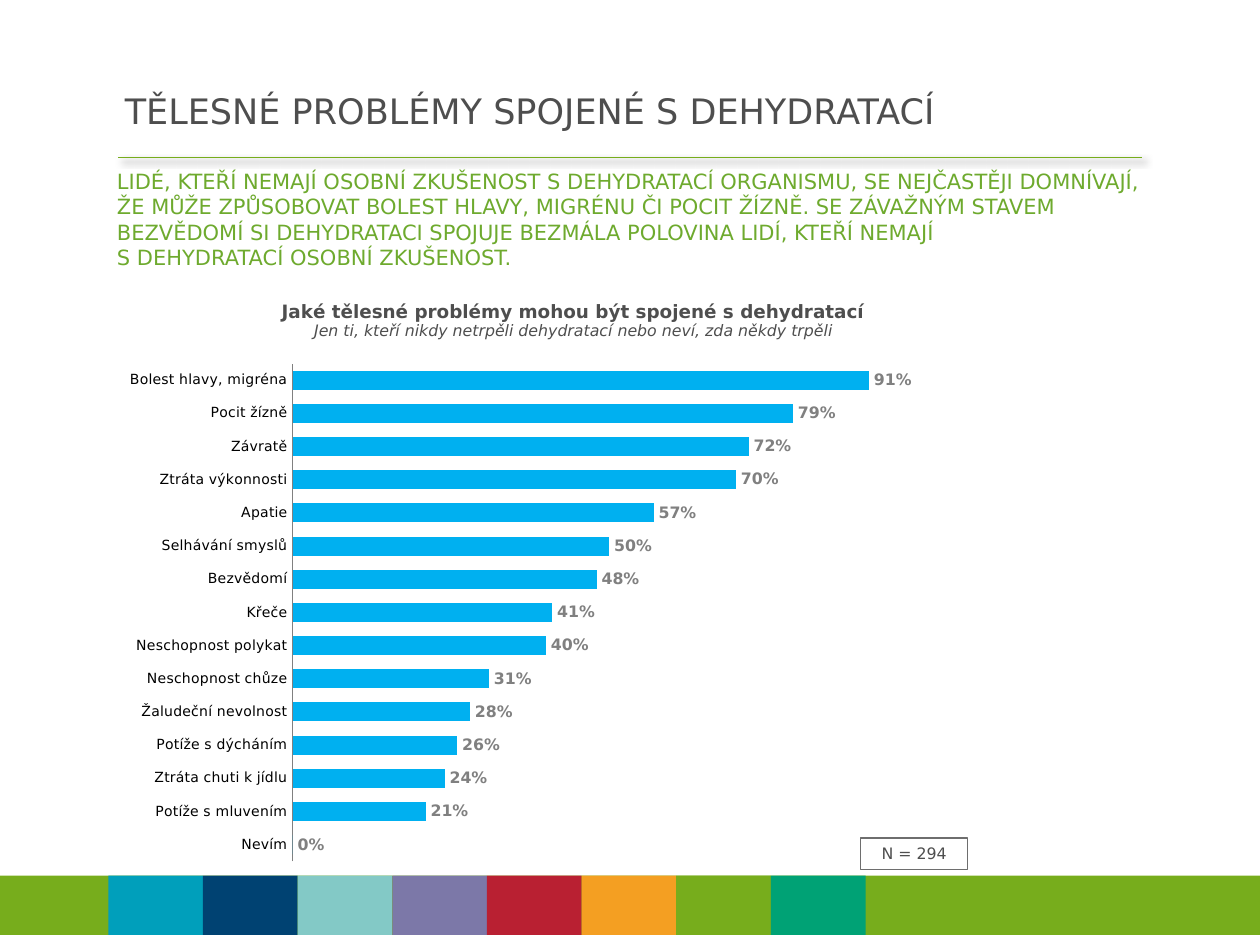
from copy import deepcopy

from pptx import Presentation
from pptx.chart.data import CategoryChartData
from pptx.dml.color import RGBColor
from pptx.enum.chart import XL_CHART_TYPE, XL_LABEL_POSITION, XL_TICK_MARK
from pptx.enum.shapes import MSO_CONNECTOR, MSO_SHAPE
from pptx.enum.text import MSO_ANCHOR, MSO_AUTO_SIZE, PP_ALIGN
from pptx.oxml import parse_xml
from pptx.oxml.ns import nsdecls, qn
from pptx.util import Inches, Pt

BAR = XL_CHART_TYPE.BAR_CLUSTERED
OUTSIDE_END = XL_LABEL_POSITION.OUTSIDE_END
NO_TICK = XL_TICK_MARK.NONE
STRAIGHT = MSO_CONNECTOR.STRAIGHT
RECTANGLE = MSO_SHAPE.RECTANGLE
TOP, MIDDLE = MSO_ANCHOR.TOP, MSO_ANCHOR.MIDDLE
NO_FIT = MSO_AUTO_SIZE.NONE
LEFT, CENTER = PP_ALIGN.LEFT, PP_ALIGN.CENTER

FONT = "DejaVu Sans"
DARK, GREEN = "4E4E4E", "77AD1C"
BAND_COLORS = ["009FBB", "004272", "83C9C6", "7C78A8",
               "B92032", "F49F22", GREEN, "00A275"]
TITLE = "TĚLESNÉ PROBLÉMY SPOJENÉ S DEHYDRATACÍ"
SUMMARY = (
    "LIDÉ, KTEŘÍ NEMAJÍ OSOBNÍ ZKUŠENOST S DEHYDRATACÍ ORGANISMU, "
    "SE NEJČASTĚJI DOMNÍVAJÍ, ŽE MŮŽE ZPŮSOBOVAT BOLEST HLAVY, MIGRÉNU "
    "ČI POCIT ŽÍZNĚ. SE ZÁVAŽNÝM STAVEM BEZVĚDOMÍ SI DEHYDRATACI SPOJUJE "
    "BEZMÁLA POLOVINA LIDÍ, KTEŘÍ NEMAJÍ\nS DEHYDRATACÍ OSOBNÍ ZKUŠENOST."
)
CHART_TITLE = "Jaké tělesné problémy mohou být spojené s dehydratací"
CHART_SUBTITLE = "Jen ti, kteří nikdy netrpěli dehydratací nebo neví, zda někdy trpěli"
PROBLEMS = {
    "Bolest hlavy, migréna": 0.91,
    "Pocit žízně": 0.79,
    "Závratě": 0.72,
    "Ztráta výkonnosti": 0.7,
    "Apatie": 0.57,
    "Selhávání smyslů": 0.5,
    "Bezvědomí": 0.48,
    "Křeče": 0.41,
    "Neschopnost polykat": 0.4,
    "Neschopnost chůze": 0.31,
    "Žaludeční nevolnost": 0.28,
    "Potíže s dýcháním": 0.26,
    "Ztráta chuti k jídlu": 0.24,
    "Potíže s mluvením": 0.21,
    "Nevím": 0,
}


def color(value):
    """Turn a hex string into a colour."""
    return RGBColor.from_string(value)


def format_font(font, size, fill, bold=False, italic=False):
    """Set the typeface, size, colour and style of a font."""
    font.name, font.size = FONT, Pt(size)
    font.bold, font.italic = bold, italic
    font.color.rgb = color(fill)


def write(paragraph, text, align=LEFT, after=0, **style):
    """Fill a paragraph with formatted text, where a newline breaks the line."""
    paragraph.text = text
    paragraph.alignment = align
    paragraph.space_before, paragraph.space_after = Pt(0), Pt(after)
    for run in paragraph.runs:
        format_font(run.font, **style)
    for line_break in paragraph._p.findall(qn("a:br")):
        line_break.insert(0, deepcopy(paragraph.runs[0]._r.rPr))


def place(shape, left, top, width, height):
    """Move and size a shape in inches."""
    shape.left, shape.top = Inches(left), Inches(top)
    shape.width, shape.height = Inches(width), Inches(height)


def set_frame(text_frame, anchor):
    """Make a text frame wrap at a fixed size with the given anchor."""
    text_frame.word_wrap = True
    text_frame.auto_size = NO_FIT
    text_frame.vertical_anchor = anchor


def add_rectangle(slide, left, top, width, height, fill=None, line=None):
    """Add a flat rectangle with an optional fill and outline."""
    shape = slide.shapes.add_shape(
        RECTANGLE, Inches(left), Inches(top), Inches(width), Inches(height))
    shape.shadow.inherit = False
    if fill:
        shape.fill.solid()
        shape.fill.fore_color.rgb = color(fill)
    else:
        shape.fill.background()
    if line:
        shape.line.color.rgb = color(line)
        shape.line.width = Pt(0.75)
    else:
        shape.line.fill.background()
    return shape


def add_rule(slide, left, top, width):
    """Add the green rule with its soft shadow."""
    rule = slide.shapes.add_connector(
        STRAIGHT, Inches(left), Inches(top), Inches(left + width), Inches(top))
    rule.line.color.rgb = color(GREEN)
    rule.line.width = Pt(0.75)
    rule._element.spPr.append(parse_xml(
        f'<a:effectLst {nsdecls("a")}><a:outerShdw blurRad="{Pt(4)}" '
        f'dist="{Pt(3)}" dir="2700000" rotWithShape="0"><a:srgbClr val="000000">'
        '<a:alpha val="40000"/></a:srgbClr></a:outerShdw></a:effectLst>'))


def add_band(slide, left, top, width, height):
    """Add the footer band with its row of coloured blocks."""
    add_rectangle(slide, left, top, width, height, fill=GREEN)
    first, last = left + 0.86, left + 6.87
    step = (last - first) / len(BAND_COLORS)
    for index, fill in enumerate(BAND_COLORS):
        add_rectangle(slide, first + index * step, top, step, height, fill=fill)


def add_heading(slide, left, top, width, height):
    """Place the slide title."""
    title = slide.shapes.title
    place(title, left, top, width, height)
    set_frame(title.text_frame, MIDDLE)
    write(title.text_frame.paragraphs[0], TITLE, after=3, size=20, fill=DARK)


def add_summary(slide, left, top, width, height):
    """Add the summary text below the rule."""
    box = slide.shapes.add_textbox(
        Inches(left), Inches(top), Inches(width), Inches(height))
    set_frame(box.text_frame, TOP)
    write(box.text_frame.paragraphs[0], SUMMARY, size=12, fill="6EAA2E")


def add_sample_size(slide, left, top, width, height):
    """Add the outlined box with the sample size."""
    box = add_rectangle(slide, left, top, width, height, line="6E6E6E")
    set_frame(box.text_frame, MIDDLE)
    write(box.text_frame.paragraphs[0], "N = 294", align=CENTER, size=9, fill=DARK)


def set_layout(element, index, target="", **fractions):
    """Give a chart part a manual layout in fractions of the chart."""
    for layout in element.findall(qn("c:layout")):
        element.remove(layout)
    modes = "".join(f'<c:{axis}Mode val="edge"/>' for axis in "xy")
    values = "".join(f'<c:{key} val="{value}"/>' for key, value in fractions.items())
    element.insert(index, parse_xml(
        f'<c:layout {nsdecls("c")}><c:manualLayout>{target}{modes}{values}'
        '</c:manualLayout></c:layout>'))


def add_problem_chart(slide, left, top, width, height):
    """Add the bar chart of problems linked to dehydration."""
    data = CategoryChartData(number_format="0%")
    data.categories = list(PROBLEMS)
    data.add_series("Series 1", list(PROBLEMS.values()))
    chart = slide.shapes.add_chart(
        BAR, Inches(left), Inches(top), Inches(width), Inches(height), data).chart
    chart.has_legend = False
    format_font(chart.font, size=18, fill="000000")

    heading = chart.chart_title.text_frame
    write(heading.paragraphs[0], CHART_TITLE, align=CENTER,
          size=10.5, fill=DARK, bold=True)
    write(heading.add_paragraph(), CHART_SUBTITLE, align=CENTER,
          size=9, fill=DARK, italic=True)
    set_layout(chart.chart_title._element, 1, x=0.3, y=0.03)
    set_layout(chart._chartSpace.chart.plotArea, 0,
               target='<c:layoutTarget val="inner"/>',
               x=0.316, y=0.14, w=0.684, h=0.795)

    categories, values = chart.category_axis, chart.value_axis
    categories.reverse_order = True
    categories.major_tick_mark = categories.minor_tick_mark = NO_TICK
    categories.format.line.color.rgb = color("808080")
    categories.format.line.width = Pt(0.75)
    format_font(categories.tick_labels.font, size=8, fill="000000")
    values.minimum_scale, values.maximum_scale = 0, 1
    values.has_major_gridlines = False
    values.visible = False

    plot = chart.plots[0]
    plot.gap_width = 75
    plot.vary_by_categories = False
    bars = plot.series[0].format.fill
    bars.solid()
    bars.fore_color.rgb = color("00B0F0")
    plot.has_data_labels = True
    labels = plot.data_labels
    labels.show_value = True
    labels.number_format, labels.number_format_is_linked = "0%", False
    labels.position = OUTSIDE_END
    format_font(labels.font, size=9, fill="808080", bold=True)


def main():
    """Build the slide and save it."""
    presentation = Presentation()
    presentation.slide_width, presentation.slide_height = Inches(10), Inches(7.5)
    slide = presentation.slides.add_slide(presentation.slide_layouts[5])
    add_rule(slide, 0.94, 1.25, 8.12)
    add_band(slide, 0, 6.95, 10, 0.47)
    add_heading(slide, 0.89, 0.62, 8.87, 0.51)
    add_summary(slide, 0.83, 1.29, 8.35, 0.8)
    add_sample_size(slide, 6.83, 6.65, 0.85, 0.25)
    add_problem_chart(slide, 0, 2.19, 7.35, 4.97)
    presentation.save("out.pptx")


if __name__ == "__main__":
    main()
